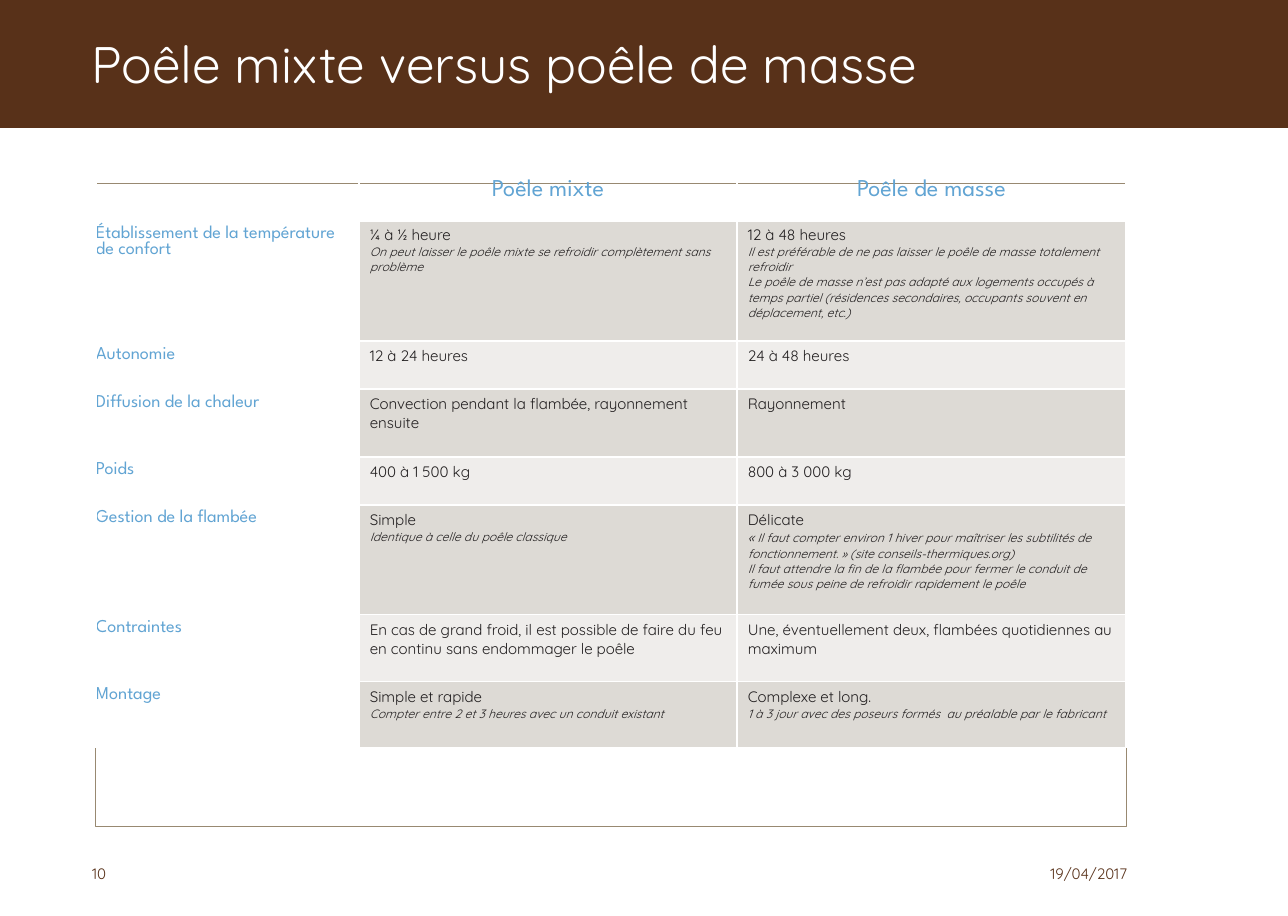
"""Build the slide comparing mixed stoves with masonry stoves."""
from lxml import etree
from pptx import Presentation
from pptx.dml.color import RGBColor
from pptx.enum.shapes import MSO_SHAPE
from pptx.enum.text import MSO_ANCHOR, PP_ALIGN
from pptx.oxml.ns import qn
from pptx.util import Pt

RECTANGLE = MSO_SHAPE.RECTANGLE
MIDDLE = MSO_ANCHOR.MIDDLE
LEFT, CENTER, RIGHT = PP_ALIGN.LEFT, PP_ALIGN.CENTER, PP_ALIGN.RIGHT
PX = 8412
BODY_FONT, HEAD_FONT = "Quicksand", "League Spartan"
COLORS = {
    "brown": "583119",
    "frame": "988971",
    "blue": "61A4D3",
    "ink": "221F20",
    "white": "FFFFFF",
    "odd": "DDDAD5",
    "even": "EFEDEB",
}

COLUMN_WIDTHS = [263, 378, 389]
ROWS = [
    (46, "", "Poêle mixte", "Poêle de masse"),
    (121, "Établissement de la température de confort",
     "¼ à ½ heure\nOn peut laisser le poêle mixte se refroidir complètement sans problème",
     "12 à 48 heures\nIl est préférable de ne pas laisser le poêle de masse totalement refroidir\n"
     "Le poêle de masse n’est pas adapté aux logements occupés à temps partiel "
     "(résidences secondaires, occupants souvent en déplacement, etc.)"),
    (48, "Autonomie", "12 à 24 heures", "24 à 48 heures"),
    (68, "Diffusion de la chaleur",
     "Convection pendant la flambée, rayonnement ensuite", "Rayonnement"),
    (48, "Poids", "400 à 1 500 kg", "800 à 3 000 kg"),
    (110, "Gestion de la flambée",
     "Simple\nIdentique à celle du poêle classique",
     "Délicate\n« Il faut compter environ 1 hiver pour maîtriser les subtilités de "
     "fonctionnement. » (site conseils-thermiques.org)\n"
     "Il faut attendre la fin de la flambée pour fermer le conduit de fumée "
     "sous peine de refroidir rapidement le poêle"),
    (67, "Contraintes",
     "En cas de grand froid, il est possible de faire du feu en continu "
     "sans endommager le poêle",
     "Une, éventuellement deux, flambées quotidiennes au maximum"),
    (66, "Montage",
     "Simple et rapide\nCompter entre 2 et 3 heures avec un conduit existant",
     "Complexe et long.\n1 à 3 jour avec des poseurs formés  au préalable par le fabricant"),
]


def style(font, name, size, color, italic=False):
    font.name = name
    font.size = Pt(size)
    font.color.rgb = RGBColor.from_string(COLORS[color])
    font.bold = False
    font.italic = italic


def add_border(cell, index, side, points):
    line = etree.Element(qn("a:" + side), w=str(Pt(points)))
    fill = etree.SubElement(line, qn("a:solidFill"))
    etree.SubElement(fill, qn("a:srgbClr"), val=COLORS["white"])
    cell._tc.get_or_add_tcPr().insert(index, line)


deck = Presentation()
deck.slide_width = 1288 * PX
deck.slide_height = 916 * PX
slide = deck.slides.add_slide(deck.slide_layouts[6])

band = slide.shapes.add_shape(RECTANGLE, 0, 0, 1288 * PX, 128 * PX)
band.shadow.inherit = False
band.fill.solid()
band.fill.fore_color.rgb = RGBColor.from_string(COLORS["brown"])
band.line.fill.background()

frame = slide.shapes.add_shape(RECTANGLE, 95 * PX, 183 * PX, 1031 * PX, 643 * PX)
frame.shadow.inherit = False
frame.fill.background()
frame.line.color.rgb = RGBColor.from_string(COLORS["frame"])
frame.line.width = Pt(0.25)

for text, left, top, width, height, size, color, align in [
    ("Poêle mixte versus poêle de masse", 79, 0, 1061, 126, 34, "white", LEFT),
    ("19/04/2017", 923, 849, 217, 49, 10, "brown", RIGHT),
    ("10", 79, 849, 286, 49, 10, "brown", LEFT),
]:
    label = slide.shapes.add_textbox(left * PX, top * PX, width * PX, height * PX).text_frame
    label.word_wrap = True
    label.vertical_anchor = MIDDLE
    label.margin_left = label.margin_right = 13 * PX
    label.margin_top = label.margin_bottom = 5 * PX
    label.text = text
    label.paragraphs[0].alignment = align
    style(label.paragraphs[0].font, BODY_FONT, size, color)

comparison = slide.shapes.add_table(
    len(ROWS), len(COLUMN_WIDTHS), 96 * PX, 174 * PX,
    sum(COLUMN_WIDTHS) * PX, sum(row[0] for row in ROWS) * PX).table
comparison.horz_banding = False
for column, width in zip(comparison.columns, COLUMN_WIDTHS):
    column.width = width * PX

for row_index, (height, *texts) in enumerate(ROWS):
    comparison.rows[row_index].height = height * PX
    is_header = row_index == 0
    for column_index, text in enumerate(texts):
        cell = comparison.cell(row_index, column_index)
        is_criterion = column_index == 0
        if is_header:
            cell.fill.background()
        else:
            shade = "white" if is_criterion else "odd" if row_index % 2 else "even"
            cell.fill.solid()
            cell.fill.fore_color.rgb = RGBColor.from_string(COLORS[shade])
            if is_criterion:
                cell.margin_left = 0
        top_width = 3 if row_index == 1 else 1
        bottom_width = 3 if is_header else 1
        for index, (side, points) in enumerate(
                [("lnL", 1), ("lnR", 1), ("lnT", top_width), ("lnB", bottom_width)]):
            add_border(cell, index, side, points)

        for line_index, line in enumerate(text.split("\n")):
            content = cell.text_frame
            paragraph = content.add_paragraph() if line_index else content.paragraphs[0]
            for piece in filter(None, line.partition("«")):
                run = paragraph.add_run()
                run.text = piece
                if piece == "«":
                    run.font.size = Pt(9)
            if is_header:
                paragraph.alignment = CENTER
                style(paragraph.font, HEAD_FONT, 16, "blue")
            elif is_criterion:
                style(paragraph.font, HEAD_FONT, 12, "blue")
            elif line_index:
                style(paragraph.font, BODY_FONT, 8, "ink", italic=True)
            else:
                style(paragraph.font, BODY_FONT, 10, "ink")

deck.save("out.pptx")
